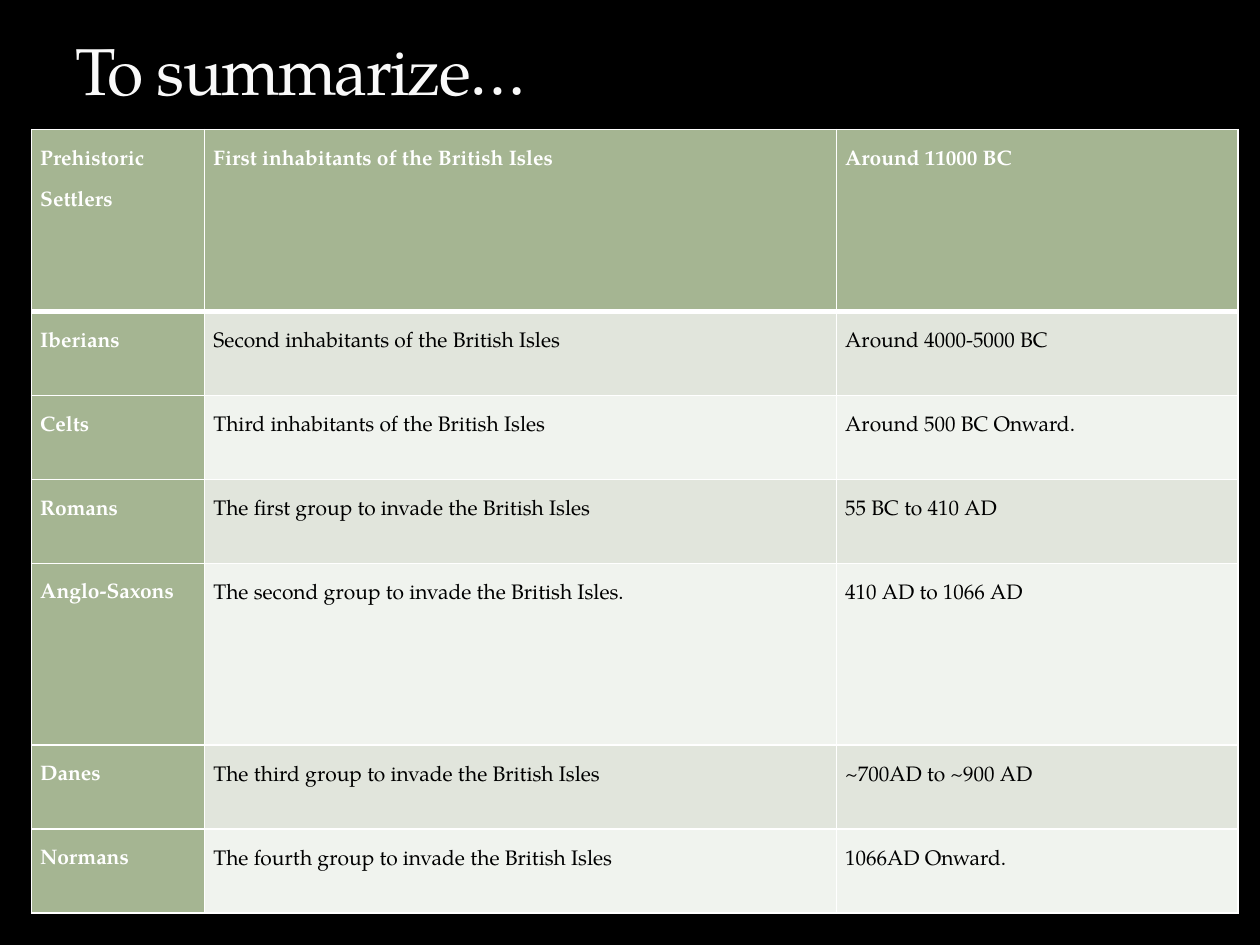
from lxml.etree import SubElement
from pptx import Presentation
from pptx.dml.color import RGBColor
from pptx.enum.text import MSO_ANCHOR, PP_ALIGN
from pptx.oxml.ns import qn
from pptx.util import Pt

BLACK = RGBColor(0x00, 0x00, 0x00)
WHITE = RGBColor(0xFF, 0xFF, 0xFF)
PALE = RGBColor(0xF9, 0xF9, 0xF9)
OLIVE = RGBColor(0x3C, 0x44, 0x22)
SAGE = RGBColor(0xA5, 0xB5, 0x92)
BANDS = (RGBColor(0xF0, 0xF3, 0xEE), RGBColor(0xE1, 0xE5, 0xDC))

ROWS = (
    ("Prehistoric Settlers", "First inhabitants of the British Isles", "Around 11000 BC"),
    ("Iberians", "Second inhabitants of the British Isles", "Around 4000-5000 BC"),
    ("Celts", "Third inhabitants of the British Isles", "Around 500 BC Onward."),
    ("Romans", "The first group to invade the British Isles", "55 BC to 410 AD"),
    ("Anglo-Saxons", "The second group to invade the British Isles.", "410 AD to 1066 AD"),
    ("Danes", "The third group to invade the British Isles", "~700AD to ~900 AD"),
    ("Normans", "The fourth group to invade the British Isles", "1066AD Onward."),
)
WIDTHS = (99, 361, 229.5)
TALL, SHORT = 103.9, 48
HEIGHTS = (TALL, SHORT, SHORT, SHORT, TALL, SHORT, SHORT)


def stroke(parent, tag, width, color, alpha=100):
    """Put a solid line element first in its parent."""
    line = parent.makeelement(qn(tag), {"w": str(int(Pt(width)))})
    fill = SubElement(line, qn("a:solidFill"))
    tint = SubElement(fill, qn("a:srgbClr"), val=str(color))
    if alpha < 100:
        SubElement(tint, qn("a:alpha"), val=str(alpha * 1000))
    parent.insert(0, line)


class Deck:
    """Holds the style and the current slide."""

    font = "TeX Gyre Pagella"

    def __init__(self, wide, high):
        self.prs = Presentation()
        self.prs.slide_width, self.prs.slide_height = Pt(wide), Pt(high)
        self.slide = self.prs.slides.add_slide(self.prs.slide_layouts[5])
        fill = self.slide.background.fill
        fill.solid()
        fill.fore_color.rgb = BLACK

    def style(self, run, size, color, bold=False):
        run.font.name = self.font
        run.font.size = Pt(size)
        run.font.color.rgb = color
        run.font.bold = bold

    def title(self, text, left, top, wide, high):
        box = self.slide.shapes.title
        box.left, box.top, box.width, box.height = map(Pt, (left, top, wide, high))
        frame = box.text_frame
        frame.text = text
        frame.vertical_anchor = MSO_ANCHOR.BOTTOM
        par = frame.paragraphs[0]
        par.alignment = PP_ALIGN.LEFT
        run = par.runs[0]
        self.style(run, 37.8, PALE)
        props = run.font._element
        props.set("spc", "-100")
        stroke(props, "a:ln", 0.25, OLIVE, 25)

    def cell(self, cell, text, row, col):
        head = row == 0 or col == 0
        cell.margin_left = cell.margin_right = Pt(5)
        cell.margin_top = cell.margin_bottom = 0
        cell.fill.solid()
        cell.fill.fore_color.rgb = SAGE if head else BANDS[row % 2]
        cell.text_frame.text = text
        par = cell.text_frame.paragraphs[0]
        par.line_spacing = 2.0
        self.style(par.runs[0], 12, WHITE if head else BLACK, head)
        edges = {"B": 3 if row == 0 else 1, "T": 3 if row == 1 else 1, "R": 1, "L": 1}
        for side, width in edges.items():
            stroke(cell._tc.get_or_add_tcPr(), f"a:ln{side}", width, WHITE)

    def table(self, rows, left, top, widths, heights):
        frame = self.slide.shapes.add_table(
            len(rows), len(widths), Pt(left), Pt(top), Pt(sum(widths)), Pt(sum(heights)))
        table = frame.table
        for col, width in zip(table.columns, widths):
            col.width = Pt(width)
        for row, height in zip(table.rows, heights):
            row.height = Pt(height)
        for r, texts in enumerate(rows):
            for c, text in enumerate(texts):
                self.cell(table.cell(r, c), text, r, c)


def main():
    deck = Deck(720, 540)
    deck.table(ROWS, 18, 74, WIDTHS, HEIGHTS)
    deck.title("To summarize…", 36, 12, 648, 54)
    deck.prs.save("out.pptx")


if __name__ == "__main__":
    main()
